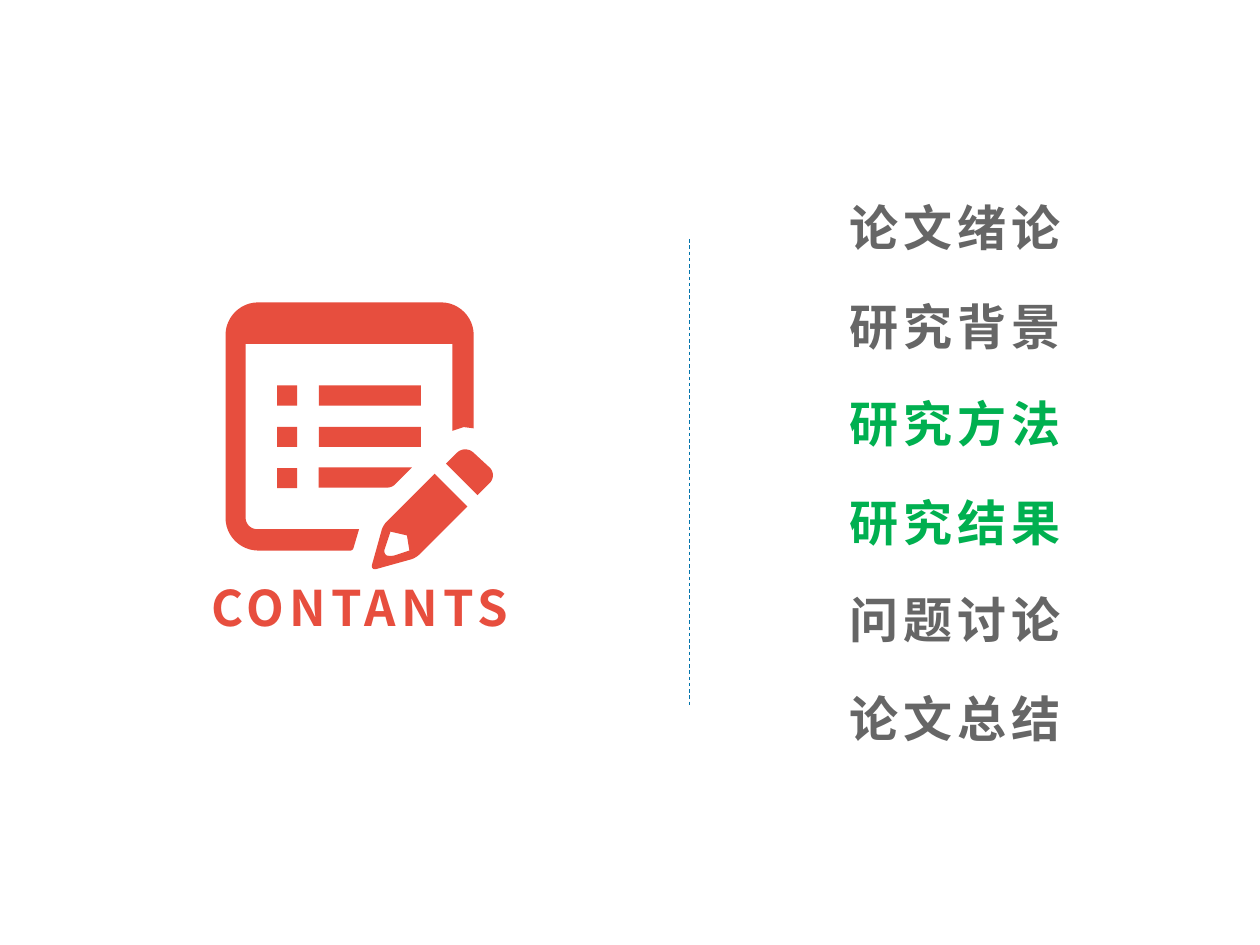
from typing import NamedTuple

from lxml.etree import SubElement
from pptx import Presentation
from pptx.dml.color import RGBColor
from pptx.enum.dml import MSO_LINE
from pptx.enum.shapes import MSO_CONNECTOR, MSO_SHAPE
from pptx.enum.text import MSO_ANCHOR, MSO_AUTO_SIZE, PP_ALIGN as Align
from pptx.oxml.ns import qn
from pptx.util import Inches, Pt

RED = RGBColor(0xE7, 0x4E, 0x3E)
GREEN = RGBColor(0x00, 0xB0, 0x50)
GRAY = RGBColor(0x66, 0x66, 0x66)
BLUE = RGBColor(0x01, 0x74, 0xAB)
FONT = "Noto Sans CJK SC"

WIDTH, HEIGHT = Inches(10), Inches(7.5)
ICON_LEFT, ICON_TOP, CELL = Inches(1.79), Inches(2.4), Inches(0.01)
TEXT_HEIGHT = 0.076
CHAPTER_TOP, CHAPTER_PITCH = 0.203, 0.1037
LIST_TOP, LIST_PITCH, MARK = 66, 32.75, 16
CURVE_STEPS = 12
ROUNDNESS = 0.55


class Corner(NamedTuple):
    col: float
    row: float
    radius: float = 0


class Chapter(NamedTuple):
    name: str
    color: RGBColor


class Box(NamedTuple):
    left: float
    top: float
    width: float
    height: float = TEXT_HEIGHT


Outline = list[Corner]

CHAPTERS = [
    Chapter("论文绪论", GRAY),
    Chapter("研究背景", GRAY),
    Chapter("研究方法", GREEN),
    Chapter("研究结果", GREEN),
    Chapter("问题讨论", GRAY),
    Chapter("论文总结", GRAY),
]

BOARD = [Corner(106, 180), Corner(101, 197, 2), Corner(0, 197, 26), Corner(0, 0, 26),
         Corner(197, 0, 26), Corner(197, 100), Corner(189, 99), Corner(180, 102),
         Corner(180, 33), Corner(16, 33), Corner(16, 180, 9)]
PENCIL = [Corner(166, 136), Corner(192, 162), Corner(151, 203, 4),
          Corner(115, 213, 5), Corner(125, 177, 4)]
PENCIL_TIP = [Corner(131, 182), Corner(144, 185), Corner(146, 197),
              Corner(131, 202, 4), Corner(125, 200, 4)]
ERASER = [Corner(175, 128), Corner(190, 113, 9), Corner(216, 137, 9), Corner(200, 153)]
CUT_BAR = [Corner(74, 131), Corner(148, 131), Corner(132, 147, 3), Corner(74, 147)]


def toward(corner: Corner, neighbor: Corner, distance: float) -> tuple[float, float]:
    run, rise = neighbor.col - corner.col, neighbor.row - corner.row
    share = distance / (run * run + rise * rise) ** 0.5
    return corner.col + run * share, corner.row + rise * share


def round_corners(outline: Outline) -> list[tuple[int, int]]:
    points = []
    for i, corner in enumerate(outline):
        before, after = outline[i - 1], outline[(i + 1) % len(outline)]
        handle = corner.radius * (1 - ROUNDNESS)
        curve = [toward(corner, before, corner.radius), toward(corner, before, handle),
                 toward(corner, after, handle), toward(corner, after, corner.radius)]
        steps = CURVE_STEPS if corner.radius else 0
        for step in range(steps + 1):
            t = step / CURVE_STEPS
            weights = ((1 - t) ** 3, 3 * t * (1 - t) ** 2, 3 * t * t * (1 - t), t ** 3)
            col, row = (sum(w * p[axis] for w, p in zip(weights, curve)) for axis in (0, 1))
            points.append((round(ICON_LEFT + col * CELL), round(ICON_TOP + row * CELL)))
    return points


def paint(part) -> None:
    part.fill.solid()
    part.fill.fore_color.rgb = RED
    part.line.fill.background()
    part.shadow.inherit = False


def draw_outline(icon, outline: Outline, *holes: Outline) -> None:
    points = round_corners(outline)
    builder = icon.shapes.build_freeform(*points[0])
    builder.add_line_segments(points[1:])
    for hole in map(round_corners, holes):
        builder.move_to(*hole[0])
        builder.add_line_segments(hole[1:])
    paint(builder.convert_to_shape())


def draw_bar(icon, col: float, row: float, cols: float) -> None:
    paint(icon.shapes.add_shape(
        MSO_SHAPE.RECTANGLE, round(ICON_LEFT + col * CELL), round(ICON_TOP + row * CELL),
        round(cols * CELL), MARK * CELL))


def draw_icon(slide) -> None:
    icon = slide.shapes.add_group_shape()
    draw_outline(icon, BOARD)
    draw_outline(icon, PENCIL, PENCIL_TIP)
    draw_outline(icon, CUT_BAR)
    draw_outline(icon, ERASER)
    for line in range(3):
        row = LIST_TOP + line * LIST_PITCH
        draw_bar(icon, 41, row, MARK)
        if line < 2:
            draw_bar(icon, 74, row, 81)


def place(label, box: Box) -> None:
    label.left, label.top = round(box.left * WIDTH), round(box.top * HEIGHT)
    label.width, label.height = round(box.width * WIDTH), round(box.height * HEIGHT)


def write(label, words: str, color: RGBColor, align: Align) -> None:
    frame = label.text_frame
    frame.word_wrap = True
    frame.auto_size = MSO_AUTO_SIZE.SHAPE_TO_FIT_TEXT
    frame.vertical_anchor = MSO_ANCHOR.TOP
    paragraph = frame.paragraphs[0]
    paragraph.text = words
    paragraph.alignment = align
    font = paragraph.font
    font.name, font.size, font.bold = FONT, Pt(28), True
    font.color.rgb = color
    defaults = paragraph._p.pPr.find(qn("a:defRPr"))
    defaults.set("spc", "300")
    SubElement(defaults, qn("a:ea")).set("typeface", FONT)


def draw_divider(slide) -> None:
    x = round(0.547 * WIDTH)
    divider = slide.shapes.add_connector(
        MSO_CONNECTOR.STRAIGHT, x, round(0.253 * HEIGHT), x, round(0.747 * HEIGHT))
    divider.line.color.rgb = BLUE
    divider.line.width = Pt(0.5)
    divider.line.dash_style = MSO_LINE.DASH
    SubElement(divider._element.spPr, qn("a:effectLst"))


def main() -> None:
    deck = Presentation()
    deck.slide_width, deck.slide_height = WIDTH, HEIGHT
    slide = deck.slides.add_slide(deck.slide_layouts[5])
    draw_divider(slide)
    for i, chapter in enumerate(CHAPTERS):
        label = slide.shapes.add_textbox(0, 0, 0, 0)
        place(label, Box(0.664, CHAPTER_TOP + i * CHAPTER_PITCH, 0.196))
        write(label, chapter.name, chapter.color, Align.LEFT)
    draw_icon(slide)
    title = slide.shapes.title
    place(title, Box(0.14, 0.604, 0.291))
    write(title, "CONTANTS", RED, Align.CENTER)
    deck.save("out.pptx")


if __name__ == "__main__":
    main()
